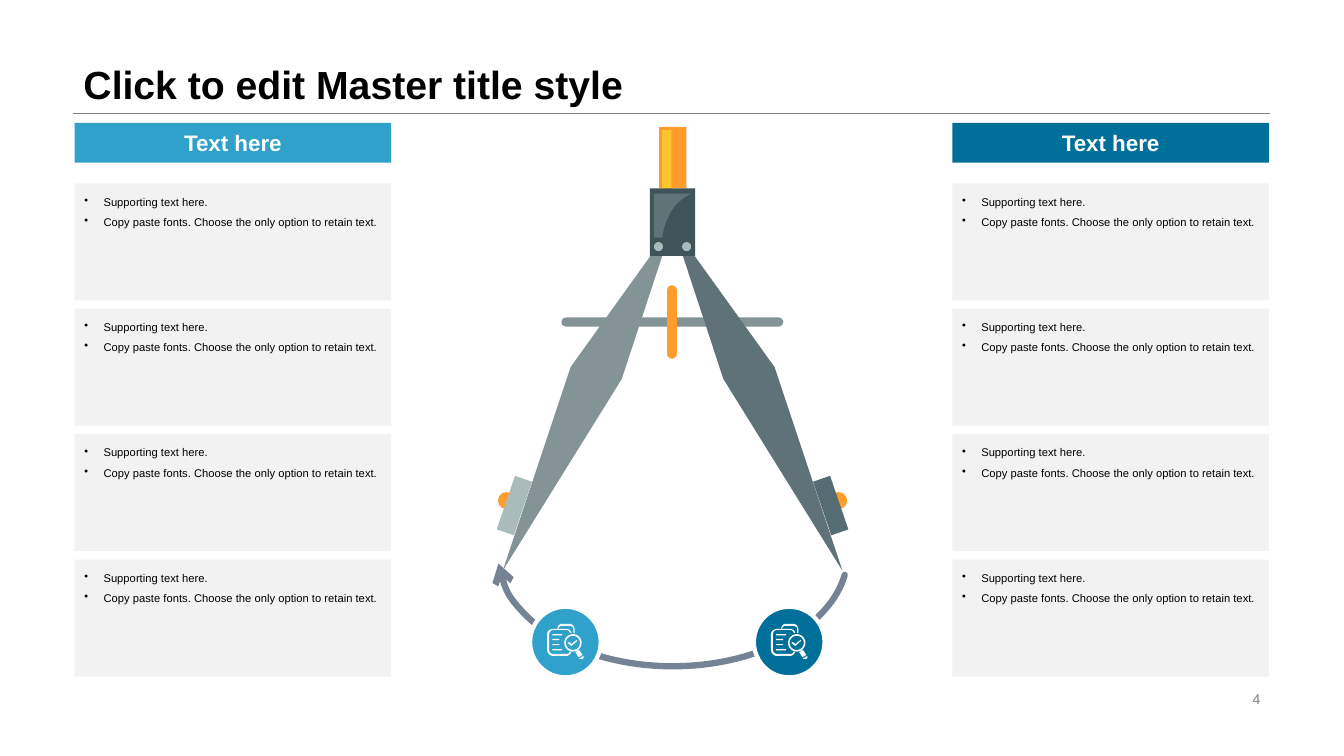
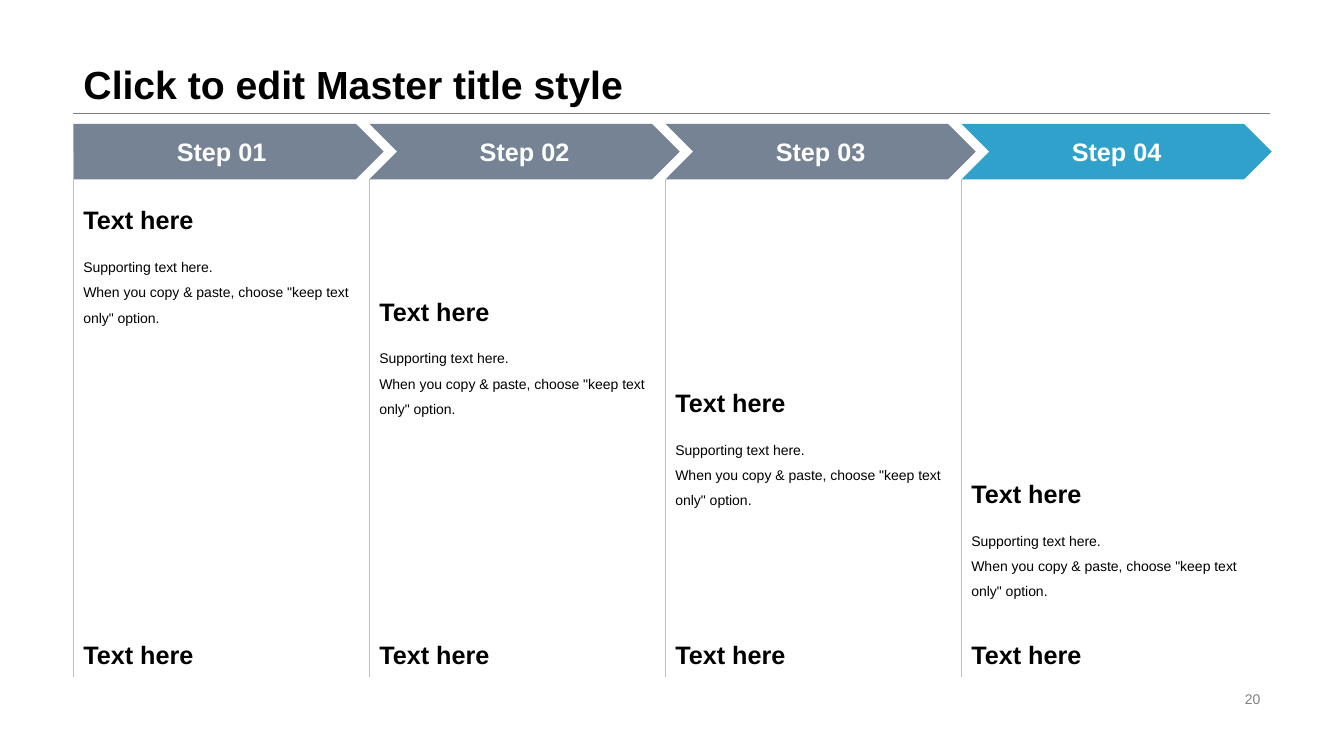
from math import cos, pi, sin

from lxml import etree
from pptx import Presentation
from pptx.dml.color import RGBColor
from pptx.enum.shapes import MSO_CONNECTOR, MSO_SHAPE
from pptx.enum.text import MSO_ANCHOR, PP_ALIGN
from pptx.oxml.ns import qn
from pptx.util import Cm, Pt

RECT, ROUND, OVAL = MSO_SHAPE.RECTANGLE, MSO_SHAPE.ROUNDED_RECTANGLE, MSO_SHAPE.OVAL
ARC, PLATE, NOTCH = MSO_SHAPE.ARC, MSO_SHAPE.PENTAGON, MSO_SHAPE.CHEVRON
LINE = MSO_CONNECTOR.STRAIGHT
TOP, MID, LOW = MSO_ANCHOR.TOP, MSO_ANCHOR.MIDDLE, MSO_ANCHOR.BOTTOM
LEFT, CENTER, RIGHT = PP_ALIGN.LEFT, PP_ALIGN.CENTER, PP_ALIGN.RIGHT

# Content
TITLE = "Click to edit Master title style"
HEAD = "Text here"
CARD = ["Supporting text here.", "Copy paste fonts. Choose the only option to retain text."]
BODY = ["Supporting text here.", 'When you copy & paste, choose "keep text only" option.']
SIDES = [  # card left, disc left, colour
    (1.88, 13.36, "sky"),
    (24.0, 19.0, "sea"),
]
CARDS = 4
STEPS = [("Step 01", "slate"), ("Step 02", "slate"), ("Step 03", "slate"), ("Step 04", "sky")]

# Shared look
COLORS = {
    "black": "000000", "white": "FFFFFF", "gray": "808080", "rule": "BFBFBF",
    "card": "F2F2F2", "sky": "30A1CA", "sea": "00709A", "slate": "768394",
    "orange": "FF9D2C", "yellow": "FFC42E", "steel": "839396", "iron": "5F7278",
    "mist": "AABBBC", "dusk": "546C72", "coal": "3E5459", "shine": "5F7477",
}
STYLES = {  # anchor, paragraph values, font values, colour
    "title": (LOW, {"alignment": LEFT, "line_spacing": 0.9}, {"size": Pt(28), "bold": True}, "black"),
    "page": (MID, {"alignment": RIGHT}, {"size": Pt(10)}, "gray"),
    "head": (MID, {"alignment": CENTER}, {"size": Pt(16), "bold": True}, "white"),
    "step": (MID, {"alignment": CENTER}, {"size": Pt(18), "bold": True}, "white"),
    "card": (TOP, {"alignment": LEFT, "line_spacing": 1.5}, {"size": Pt(8)}, "black"),
    "label": (TOP, {"alignment": LEFT}, {"size": Pt(18), "bold": True}, "black"),
    "foot": (MID, {"alignment": LEFT}, {"size": Pt(18), "bold": True}, "black"),
    "body": (TOP, {"alignment": LEFT, "line_spacing": 1.5}, {"size": Pt(10)}, "black"),
}

# Compass: left half only, the right half mirrors it
AXIS = 16.95
LEG = [(16.94, 5.69), (14.38, 9.25), (12.67, 14.38), (15.67, 9.55)]
PAD = [(12.52, 13.34), (12.98, 11.99), (13.41, 12.14), (12.95, 13.49)]
SHINE = [(17.42, 4.88), (16.48, 4.88), (16.48, 5.99), (16.69, 5.99),
         (16.69, 5.99, 16.76, 5.16, 17.42, 4.88)]

# Icon outlines, measured from the corner of the disc; six numbers make a curve
DISC = 1.78
SHEET = [
    (0.99, 1.14), (1.04, 1.14), (1.02, 1.19, 0.97, 1.24, 0.91, 1.24), (0.58, 1.24),
    (0.51, 1.24, 0.43, 1.17, 0.43, 1.09), (0.43, 0.69), (0.43, 0.61, 0.51, 0.56, 0.58, 0.56),
    (0.69, 0.56), (0.69, 0.48, 0.74, 0.43, 0.81, 0.43), (0.99, 0.43),
    (1.07, 0.43, 1.12, 0.51, 1.12, 0.56), (1.12, 0.66), (1.09, 0.66), (1.09, 0.56),
    (1.09, 0.51, 1.04, 0.48, 0.99, 0.48), (0.81, 0.48), (0.76, 0.48, 0.71, 0.51, 0.71, 0.56),
    (0.91, 0.56), (0.99, 0.56, 1.04, 0.61, 1.04, 0.66), (1.02, 0.66),
    (0.99, 0.64, 0.97, 0.58, 0.91, 0.58), (0.58, 0.58), (0.53, 0.58, 0.48, 0.64, 0.48, 0.69),
    (0.48, 1.09), (0.48, 1.14, 0.53, 1.19, 0.58, 1.19), (0.91, 1.19),
    (0.97, 1.19, 0.99, 1.17, 0.99, 1.14),
]
GRIP = [(1.24, 1.09), (1.14, 1.14), (1.22, 1.27), (1.32, 1.22)]
TIP = [(1.35, 1.24), (1.24, 1.3), (1.24, 1.32, 1.3, 1.32, 1.32, 1.32),
       (1.35, 1.3, 1.35, 1.27, 1.35, 1.24)]
CHECK = [(1.04, 0.94), (0.99, 0.89), (0.94, 0.91), (1.04, 0.99), (1.19, 0.86), (1.17, 0.84)]
ROWS = [(0.81, 0.69), (0.74, 0.81), (0.74, 0.94), (0.81, 1.07)]  # right end, top


def ring(x, y, r, count=24):
    turns = [2 * pi * i / count for i in range(count)]
    return [(x + r * cos(t), y + r * sin(t)) for t in turns]


ICON = [SHEET, ring(1.08, 0.91, 0.22), ring(1.08, 0.91, 0.18), GRIP, TIP, CHECK]
ICON += [[(0.56, y), (x, y), (x, y + 0.03), (0.56, y + 0.03)] for x, y in ROWS]


# Helpers
def rgb(name):
    return RGBColor.from_string(COLORS[name])


def paint(shape, fill, line=None, width=0):
    shape.shadow.inherit = False
    if fill:
        shape.fill.solid()
        shape.fill.fore_color.rgb = rgb(fill)
    else:
        shape.fill.background()
    if line:
        shape.line.color.rgb = rgb(line)
        shape.line.width = Pt(width)
    else:
        shape.line.fill.background()
    return shape


def draw(slide, kind, box, fill, line=None, width=0):
    return paint(slide.shapes.add_shape(kind, *map(Cm, box)), fill, line, width)


def rule(slide, x1, y1, x2, y2, color):
    line = slide.shapes.add_connector(LINE, *map(Cm, (x1, y1, x2, y2)))
    line.line.color.rgb = rgb(color)
    line.line.width = Pt(0.25)
    etree.SubElement(line._element.spPr, qn("a:effectLst"))


def bullet(para):
    props = para._p.get_or_add_pPr()
    props.set("marL", str(Cm(0.48)))
    props.set("indent", str(-Cm(0.48)))
    etree.SubElement(props, qn("a:buChar"), char="•")
    tabs = etree.SubElement(props, qn("a:tabLst"))
    etree.SubElement(tabs, qn("a:tab"), pos=str(Cm(0.64)), algn="l")


def write(shape, lines, style, dots=False):
    anchor, layout, font, color = STYLES[style]
    frame = shape.text_frame
    frame.word_wrap = True
    frame.vertical_anchor = anchor
    for i, text in enumerate(lines):
        para = frame.add_paragraph() if i else frame.paragraphs[0]
        if dots:
            bullet(para)
        for key, value in layout.items():
            setattr(para, key, value)
        run = para.add_run()
        run.text = text
        for key, value in {"name": "Arial", **font}.items():
            setattr(run.font, key, value)
        run.font.color.rgb = rgb(color)


def label(slide, box, lines, style):
    write(slide.shapes.add_textbox(*map(Cm, box)), lines, style)


def trace(points, dx, dy, parts=8):
    """Turn corners and cubic curves into plain points."""
    spots = []
    for point in points:
        if len(point) == 2:
            spots.append(point)
            continue
        nodes = [spots[-1], point[:2], point[2:4], point[4:]]
        for i in range(1, parts + 1):
            t = i / parts
            rates = ((1 - t) ** 3, 3 * t * (1 - t) ** 2, 3 * t * t * (1 - t), t ** 3)
            spots.append(tuple(sum(r * n[k] for r, n in zip(rates, nodes)) for k in (0, 1)))
    return [(Cm(x + dx), Cm(y + dy)) for x, y in spots]


def outline(slide, loops, fill, dx=0, dy=0):
    traced = [trace(loop, dx, dy) for loop in loops]
    form = slide.shapes.build_freeform(*traced[0][0])
    for i, spots in enumerate(traced):
        if i:
            form.move_to(*spots[0])
        form.add_line_segments(spots[1:], close=True)
    paint(form.convert_to_shape(), fill)


def flip(points):
    return [(2 * AXIS - x, y) for x, y in points]


def start(deck, page):
    slide = deck.slides.add_slide(deck.slide_layouts[5])
    title = slide.shapes.title
    box = {"left": 1.85, "top": 0, "width": 30.15, "height": 2.84}
    for key, value in box.items():
        setattr(title, key, Cm(value))
    write(title, [TITLE], "title")
    rule(slide, 1.85, 2.84, 32, 2.84, "gray")
    label(slide, (23.93, 17.32, 8.08, 0.58), [page], "page")
    return slide


# Slides
def sweep(slide):
    arc = draw(slide, ARC, (12.55, 11.18, 8.81, 5.61), None, "slate", 4.5)
    arc.adjustments[0], arc.adjustments[1] = 3.95, 106.313
    line = arc.line._get_or_add_ln()
    line.set("cap", "rnd")
    etree.SubElement(line, qn("a:tailEnd"), type="arrow")


def tool(slide):
    def pair(x, y, size, fill):
        for left in (x, 2 * AXIS - x - size):
            draw(slide, OVAL, (left, y, size, size), fill)

    def bar(box, fill):
        draw(slide, ROUND, box, fill).adjustments[0] = 0.5

    bar((14.15, 8, 5.59, 0.23), "steel")
    draw(slide, RECT, (16.61, 3.2, 0.69, 1.55), "orange")
    draw(slide, RECT, (16.69, 3.28, 0.23, 1.6), "yellow")
    pair(12.55, 12.4, 0.43, "orange")
    outline(slide, [flip(LEG)], "iron")
    outline(slide, [LEG], "steel")
    outline(slide, [PAD], "mist")
    outline(slide, [flip(PAD)], "dusk")
    draw(slide, RECT, (16.38, 4.75, 1.14, 1.7), "coal")
    pair(16.48, 6.1, 0.23, "mist")
    outline(slide, [SHINE], "shine")
    bar((16.81, 7.19, 0.25, 1.85), "orange")


def compass(deck):
    slide = start(deck, "4")
    sweep(slide)
    tool(slide)
    for left, disc, color in SIDES:
        draw(slide, OVAL, (disc, 15.29, DISC, DISC), color, "white", 3)
        outline(slide, ICON, "white", disc, 15.29)
        write(draw(slide, RECT, (left, 3.1, 7.98, 1), color), [HEAD], "head")
        for row in range(CARDS):
            card = draw(slide, RECT, (left, 4.62 + 3.16 * row, 7.98, 2.95), "card")
            write(card, CARD, "card", dots=True)


def steps(deck):
    slide = start(deck, "20")
    for i, (name, color) in enumerate(STEPS):
        left, top = 1.85 + 7.46 * i, 5.03 + 2.3 * i
        arrow = draw(slide, NOTCH if i else PLATE, (left, 3.12, 7.82, 1.4), color)
        write(arrow, [name], "step")
        rule(slide, left, 4.52 if i else 3.84, left, 17.07, "rule")
        label(slide, (left, top, 7.44, 1.14), [HEAD], "label")
        label(slide, (left, top + 1.15, 7.44, 2.69), BODY, "body")
        label(slide, (left, 15.93, 7.44, 1.14), [HEAD], "foot")


def main():
    deck = Presentation()
    deck.slide_width, deck.slide_height = Cm(33.87), Cm(19.05)
    compass(deck)
    steps(deck)
    deck.save("out.pptx")


if __name__ == "__main__":
    main()
